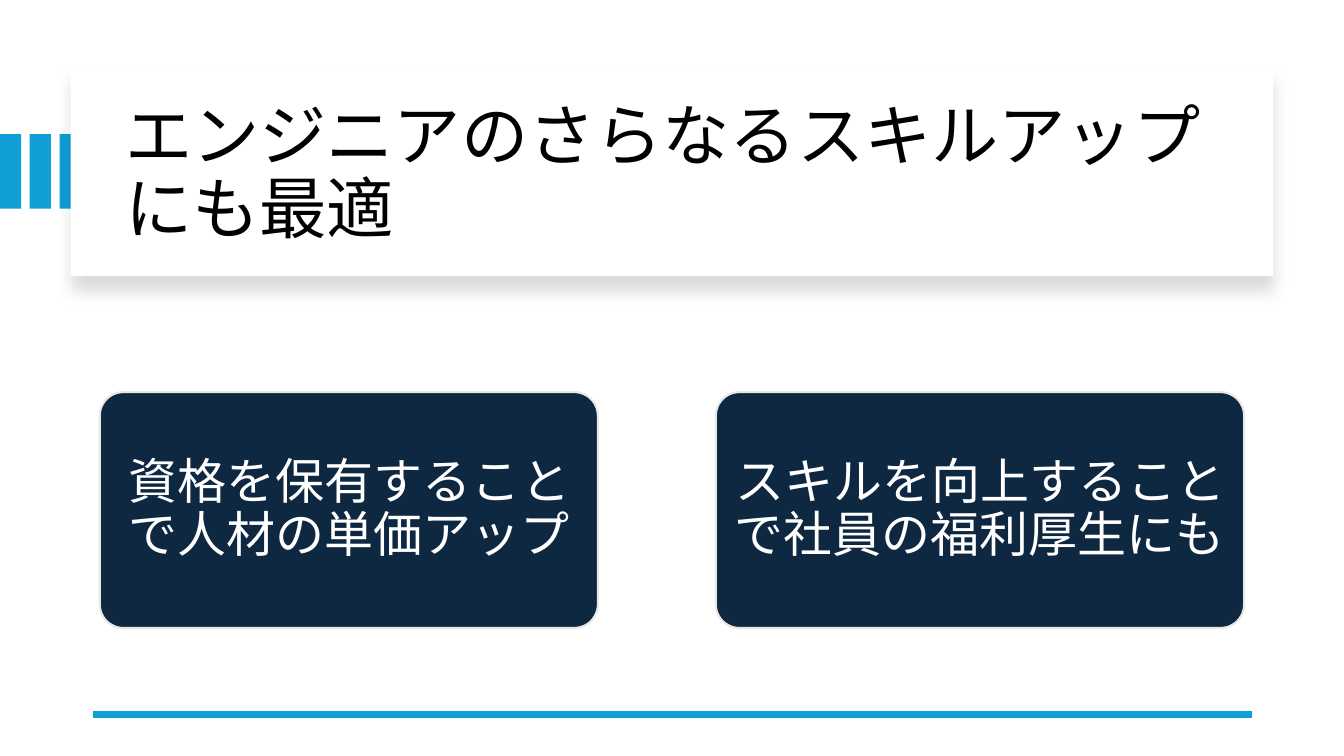
from lxml import etree
from pptx import Presentation
from pptx.dml.color import RGBColor
from pptx.enum.shapes import MSO_CONNECTOR, MSO_SHAPE
from pptx.enum.text import MSO_ANCHOR, MSO_AUTO_SIZE, PP_ALIGN
from pptx.oxml import parse_xml
from pptx.oxml.ns import nsdecls, qn
from pptx.util import Inches, Pt

RECTANGLE = MSO_SHAPE.RECTANGLE
ROUNDED_RECTANGLE = MSO_SHAPE.ROUNDED_RECTANGLE
STRAIGHT = MSO_CONNECTOR.STRAIGHT
MIDDLE = MSO_ANCHOR.MIDDLE
NO_AUTOFIT = MSO_AUTO_SIZE.NONE
LEFT = PP_ALIGN.LEFT
CENTER = PP_ALIGN.CENTER

FONT = "Noto Sans CJK JP"
ACCENT = "0F9ED5"
NAVY = "0E2841"
WHITE = "FFFFFF"


def color(value):
    return RGBColor.from_string(value)


def write(shape, text, size, text_color, alignment):
    frame = shape.text_frame
    frame.text = text
    frame.word_wrap = True
    frame.auto_size = NO_AUTOFIT
    frame.vertical_anchor = MIDDLE
    paragraph = frame.paragraphs[0]
    paragraph.alignment = alignment
    paragraph.line_spacing = 0.9
    paragraph.font.size = Pt(size)
    paragraph.font.color.rgb = color(text_color)
    paragraph.font.name = FONT
    east_asian = etree.SubElement(paragraph.font._element, qn("a:ea"))
    east_asian.set("typeface", FONT)


presentation = Presentation()
presentation.slide_width = Inches(13.33)
presentation.slide_height = Inches(7.5)
slide = presentation.slides.add_slide(presentation.slide_layouts[5])
shapes = slide.shapes
slide.background.fill.solid()
slide.background.fill.fore_color.rgb = color(WHITE)

for index in range(3):
    bar = shapes.add_shape(RECTANGLE, Inches(index * 0.295), Inches(1.33), Inches(0.21), Inches(0.74))
    bar.shadow.inherit = False
    bar.fill.solid()
    bar.fill.fore_color.rgb = color(ACCENT)
    bar.line.fill.background()

title_card = shapes.add_shape(RECTANGLE, Inches(0.7), Inches(0.67), Inches(11.93), Inches(2.07))
title_card.fill.solid()
title_card.fill.fore_color.rgb = color(WHITE)
title_card.line.fill.background()
title_card._element.spPr.append(parse_xml(
    f'<a:effectLst {nsdecls("a")}>'
    f'<a:outerShdw blurRad="{Pt(11)}" dist="{Pt(10)}" dir="5400000" algn="t" rotWithShape="0">'
    '<a:srgbClr val="000000"><a:alpha val="15000"/></a:srgbClr>'
    '</a:outerShdw></a:effectLst>'
))

title = shapes.title
title.left, title.top = Inches(1.14), Inches(0.89)
title.width, title.height = Inches(11.13), Inches(1.7)
write(title, "エンジニアのさらなるスキルアップにも最適", 48, "000000", LEFT)
title_card._element.addnext(title._element)

footer_line = shapes.add_connector(STRAIGHT, Inches(12.42), Inches(7.09), Inches(0.92), Inches(7.09))
footer_line.line.color.rgb = color(ACCENT)
footer_line.line.width = Pt(4.5)
etree.SubElement(footer_line._element.spPr, qn("a:effectLst"))

benefits = [
    (0.99, 4.94, "資格を保有することで人材の単価アップ"),
    (7.1, 5.24, "スキルを向上することで社員の福利厚生にも"),
]
for left, width, text in benefits:
    card = shapes.add_shape(ROUNDED_RECTANGLE, Inches(left), Inches(3.89), Inches(width), Inches(2.34))
    card.shadow.inherit = False
    card.adjustments[0] = 0.1
    card.fill.solid()
    card.fill.fore_color.rgb = color(NAVY)
    card.line.color.rgb = color("E8E8E8")
    card.line.width = Pt(1.5)
    card.text_frame.margin_left = card.text_frame.margin_right = Inches(0.07)
    write(card, text, 35, WHITE, CENTER)

presentation.save("out.pptx")
